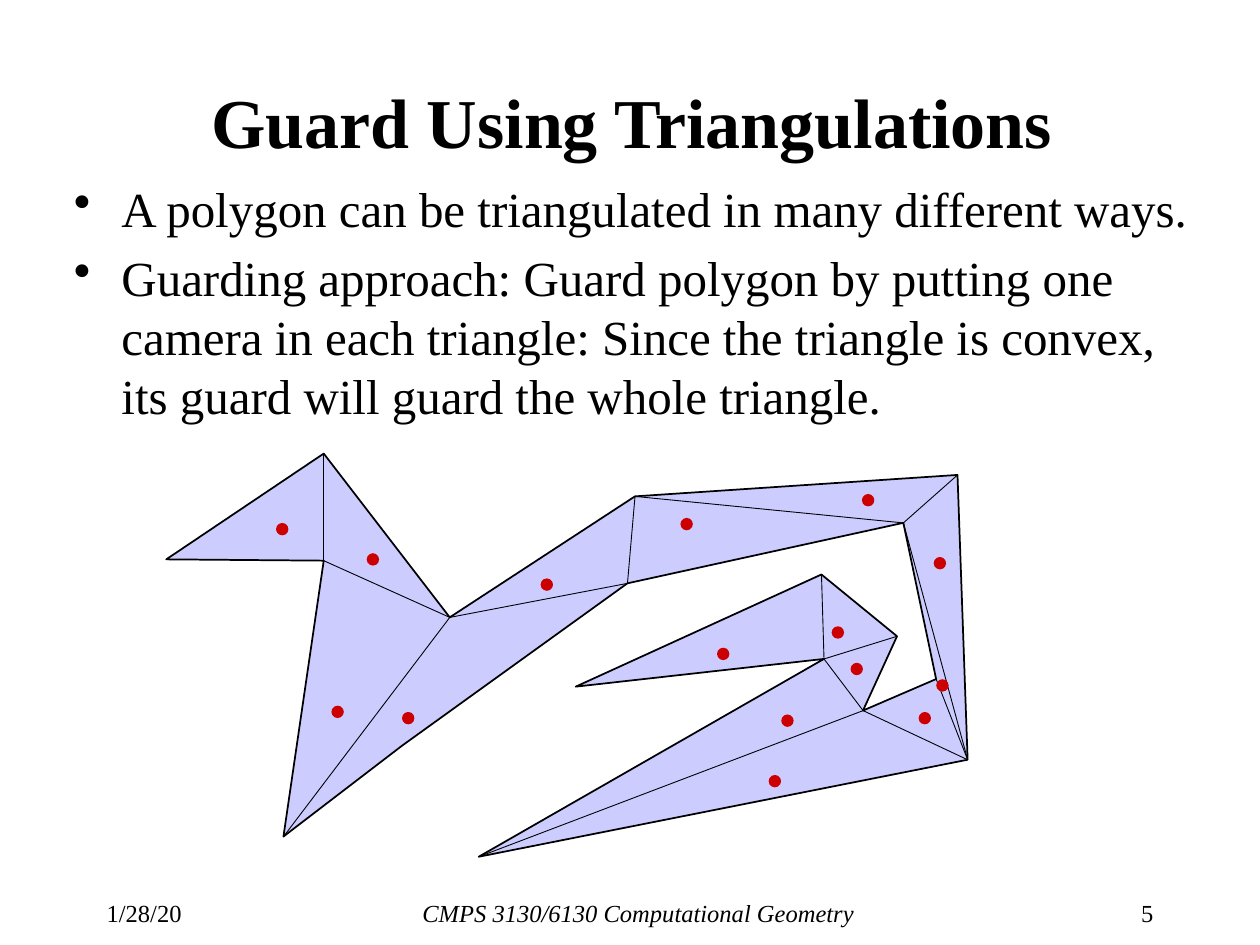
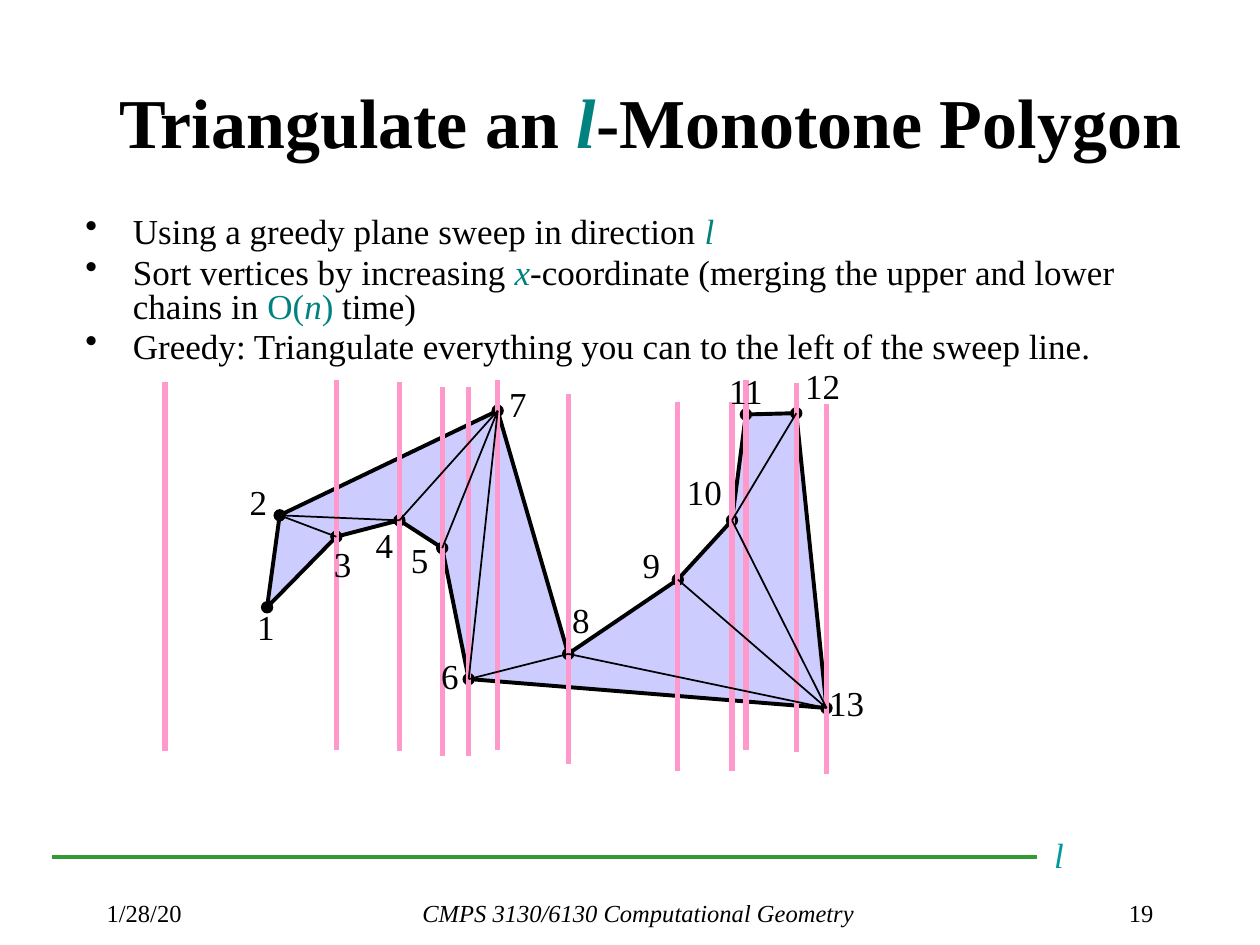
import pptx
import pptx.util
import pptx.dml.color
import pptx.enum.shapes
import pptx.enum.text
import pptx.oxml.ns
from collections import namedtuple
from lxml import etree

Cm, Pt = pptx.util.Cm, pptx.util.Pt
ALIGN = pptx.enum.text.PP_ALIGN
ANCHOR = pptx.enum.text.MSO_ANCHOR
SHAPE = pptx.enum.shapes.MSO_SHAPE
qn = pptx.oxml.ns.qn

COLORS = {
    "text": "000000", "math": "008380", "polygon": "CCCCFF", "guard": "CC0000",
    "sweep": "FF99CC", "direction": "339933", "direction_label": "009999",
}
FONT = "Times New Roman"
GRID_STEP = 0.0254  # cm per diagram grid unit
DOT = 0.25
Box = namedtuple("Box", "left top width height")


def rgb(name):
    return pptx.dml.color.RGBColor.from_string(COLORS[name])


def add_text(s, box, paragraphs, size, align=ALIGN.LEFT, anchor=ANCHOR.TOP,
             color="text", bold=False, italic=False, wrap=True):
    """Add a text box; a paragraph is a list of strings and (text, italic) math runs."""
    tf = s.shapes.add_textbox(*map(Cm, box)).text_frame
    tf.word_wrap = wrap
    tf.vertical_anchor = anchor
    for i, runs in enumerate(paragraphs):
        p = tf.paragraphs[0] if i == 0 else tf.add_paragraph()
        p.alignment = align
        p.font.name, p.font.size = FONT, Pt(size)
        p.font.bold, p.font.italic = bold, italic
        p.font.color.rgb = rgb(color)
        for run in runs:
            r = p.add_run()
            if isinstance(run, str):
                r.text = run
            else:
                r.text, r.font.italic = run
                r.font.color.rgb = rgb("math")
    return tf


def add_bullets(s, box, paragraphs, size, line_spacing=1.0):
    tf = add_text(s, box, paragraphs, size)
    for p in tf.paragraphs:
        p.line_spacing = line_spacing
        p.space_before = Pt(0.2 * size)
        pPr = p._p.get_or_add_pPr()
        pPr.set("marL", str(Cm(0.96)))
        pPr.set("indent", str(-Cm(0.96)))
        bullet = etree.Element(qn("a:buChar"), char="•")
        pPr.find(qn("a:defRPr")).addprevious(bullet)


def add_title(s, box, runs):
    add_text(s, box, [runs], 40, anchor=ANCHOR.MIDDLE, bold=True, wrap=False)


def add_footer(s, box, number):
    def part(offset, width, text, **style):
        add_text(s, Box(box.left + offset, box.top, width, box.height), [[text]], 14, **style)

    part(0, 2.41, "1/28/20")
    part(2.92, 16.1, "CMPS 3130/6130 Computational Geometry", align=ALIGN.CENTER, italic=True)
    part(box.width - 2.08, 2.08, str(number), align=ALIGN.RIGHT)


def add_line(s, start, end, color, width):
    line = s.shapes.add_connector(pptx.enum.shapes.MSO_CONNECTOR.STRAIGHT,
                                  *map(Cm, (*start, *end)))
    line.line.color.rgb = rgb(color)
    line.line.width = Pt(width)
    etree.SubElement(line._element.spPr, qn("a:effectLst"))


def add_dot(s, center, color):
    x, y = center
    dot = s.shapes.add_shape(SHAPE.OVAL, *map(Cm, (x - DOT / 2, y - DOT / 2, DOT, DOT)))
    dot.shadow.inherit = False
    dot.fill.solid()
    dot.fill.fore_color.rgb = rgb(color)
    dot.line.fill.background()


def add_polygon(s, points, line_width):
    first, *rest = [(Cm(x), Cm(y)) for x, y in points]
    builder = s.shapes.build_freeform(*first)
    builder.add_line_segments(rest, close=True)
    polygon = builder.convert_to_shape()
    polygon.shadow.inherit = False
    polygon.fill.solid()
    polygon.fill.fore_color.rgb = rgb("polygon")
    polygon.line.color.rgb = rgb("text")
    polygon.line.width = Pt(line_width)


def add_diagonals(s, vertices, pairs, width):
    for a, b in pairs:
        add_line(s, vertices[a], vertices[b], "text", width)


def grid_point(box, point):
    """Turn grid units counted from the box corner into slide centimetres."""
    return box.left + point[0] * GRID_STEP, box.top + point[1] * GRID_STEP


GUARDED_OUTLINE = [
    (32, 144), (157, 60), (257, 190), (404, 94), (660, 77), (668, 303),
    (280, 380), (554, 223), (357, 245), (552, 156), (612, 205), (585, 264),
    (643, 239), (617, 115), (398, 163), (219, 292), (125, 364), (157, 145),
]
GUARDED_DIAGONALS = [
    (1, 17), (17, 2), (2, 16), (2, 14), (14, 3), (3, 13), (13, 4),
    (13, 5), (12, 5), (11, 5), (11, 6), (7, 11), (7, 10), (9, 7),
]
GUARDS = [
    (124, 120), (196, 144), (168, 265), (224, 270), (334, 164),
    (445, 116), (589, 97), (646, 147), (648, 244), (634, 270),
    (515, 320), (525, 272), (580, 231), (565, 202), (474, 219),
]


def guarded_polygon(s, box):
    vertices = [grid_point(box, v) for v in GUARDED_OUTLINE]
    add_polygon(s, vertices, 1)
    add_diagonals(s, vertices, GUARDED_DIAGONALS, 0.5)
    for guard in GUARDS:
        add_dot(s, grid_point(box, guard), "guard")


# Vertex number: (vertex, label centre, top of its sweep line)
MONOTONE_VERTICES = {
    1: ((112, 232), (110, 247), None),
    2: ((122, 159), (104, 148), None),
    3: ((167, 176), (171, 197), 52),
    4: ((217, 163), (204, 182), 53),
    5: ((251, 185), (232, 194), 57),
    6: ((272, 289), (256, 286), 57),
    7: ((295, 76), (310, 70), 52),
    8: ((351, 269), (360, 242), 63),
    9: ((438, 210), (416, 198), 69),
    10: ((481, 163), (459, 140), 69),
    11: ((492, 79), (492, 60), 52),
    12: ((532, 78), (553, 56), 54),
    13: ((556, 312), (572, 308), 71),
}
MONOTONE_CHAIN = [1, 3, 4, 5, 6, 13, 12, 11, 10, 9, 8, 7, 2]
MONOTONE_DIAGONALS = [
    (2, 3), (2, 4), (4, 7), (5, 7), (6, 7), (6, 8),
    (10, 12), (10, 13), (9, 13), (8, 13),
]
SWEEP_START = (31, 53)
SWEEP_LENGTH = 293


def monotone_polygon(s, box):
    vertices = {n: grid_point(box, v) for n, (v, _, _) in MONOTONE_VERTICES.items()}
    add_polygon(s, [vertices[n] for n in MONOTONE_CHAIN], 2.25)
    for vertex in vertices.values():
        add_dot(s, vertex, "text")
    sweeps = [SWEEP_START] + [(v[0], top) for v, _, top in MONOTONE_VERTICES.values() if top]
    for x, top in sweeps:
        add_line(s, grid_point(box, (x, top)), grid_point(box, (x, top + SWEEP_LENGTH)),
                 "sweep", 3)
    add_diagonals(s, vertices, MONOTONE_DIAGONALS, 1)
    for n, (_, center, _) in MONOTONE_VERTICES.items():
        x, y = grid_point(box, center)
        width = 0.8 if n < 10 else 1.27
        add_text(s, Box(x - width / 2, y - 0.55, width, 1.1), [[str(n)]], 20,
                 align=ALIGN.CENTER, wrap=False)


def sweep_direction(s, box):
    y = box.top + box.height / 2
    add_line(s, (box.left, y), (box.left + box.width, y), "direction", 2.25)
    add_text(s, Box(box.left + box.width - 0.53, box.top, 1.96, box.height), [["l"]], 20,
             align=ALIGN.CENTER, color="direction_label", italic=True)


def new_slide(prs, number):
    s = prs.slides.add_slide(prs.slide_layouts[6])
    add_footer(s, Box(1.9, 17.98, 21.6, 0.64), number)
    return s


def guard_slide(prs):
    s = new_slide(prs, 5)
    add_title(s, Box(4.01, 0.84, 20.96, 3.18), ["Guard Using Triangulations"])
    add_bullets(s, Box(1.24, 3.48, 23.42, 5.89), [
        ["A polygon can be triangulated in many different ways."],
        ["Guarding approach: Guard polygon by putting one camera in each triangle: "
         "Since the triangle is convex, its guard will guard the whole triangle."],
    ], 28)
    guarded_polygon(s, Box(2.54, 7.62, 17.78, 10.16))


def monotone_slide(prs):
    s = new_slide(prs, 19)
    add_title(s, Box(2.16, 0.84, 22.07, 3.18),
              ["Triangulate an ", ("l", True), "-Monotone Polygon"])
    add_bullets(s, Box(1.47, 4.27, 23.09, 3.58), [
        ["Using a greedy plane sweep in direction ", ("l", True)],
        ["Sort vertices by increasing ", ("x", True),
         "-coordinate (merging the upper and lower chains in ",
         ("O(", False), ("n", True), (")", False), " time)"],
        ["Greedy: Triangulate everything you can to the left of the sweep line."],
    ], 20, line_spacing=0.8)
    monotone_polygon(s, Box(2.54, 6.35, 15.24, 10.16))
    sweep_direction(s, Box(1.04, 16.68, 19.86, 1.18))


def main():
    prs = pptx.Presentation()
    prs.slide_width, prs.slide_height = Cm(25.4), Cm(19.05)
    guard_slide(prs)
    monotone_slide(prs)
    prs.save("out.pptx")


if __name__ == "__main__":
    main()
